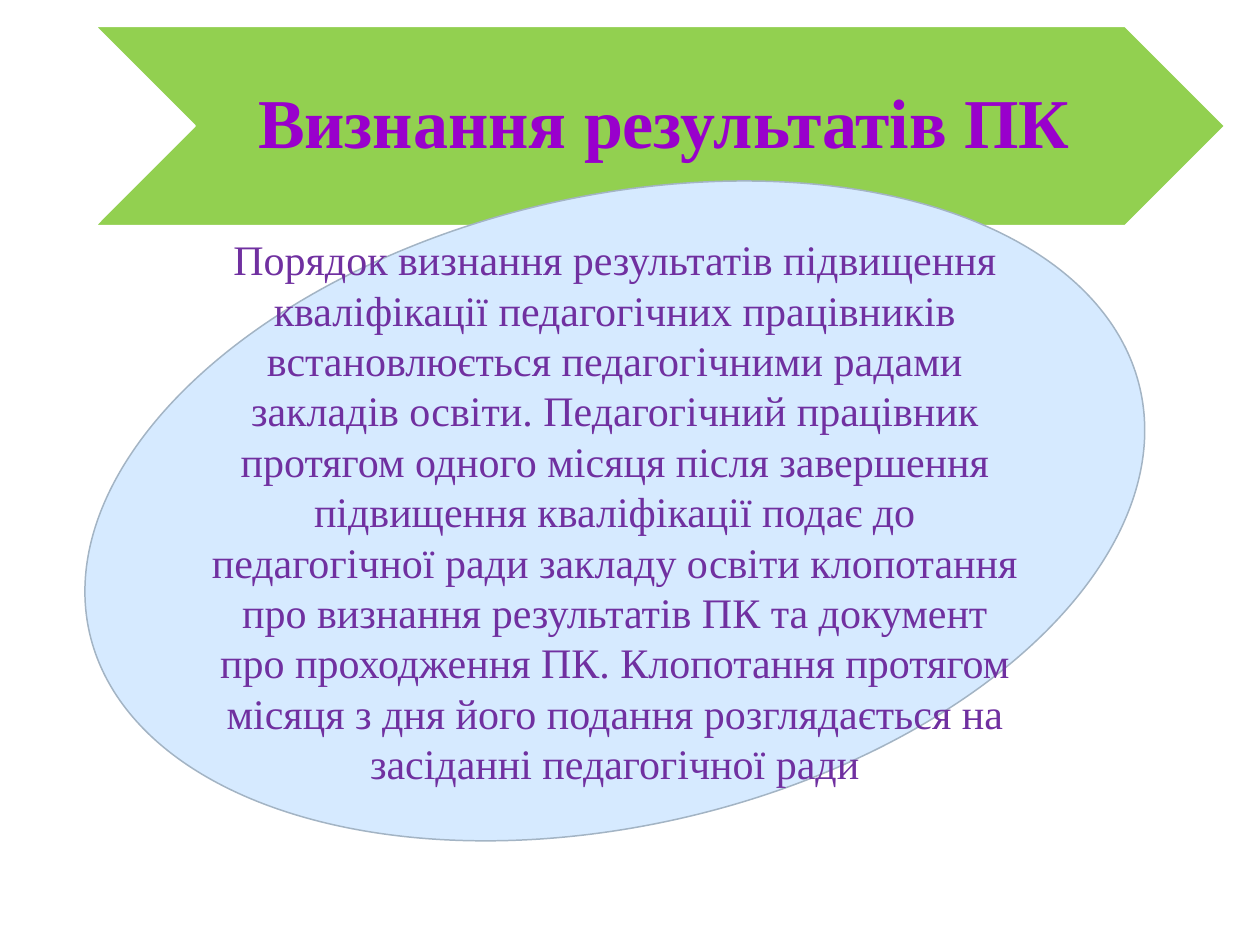
from dataclasses import dataclass

import pptx
import pptx.dml.color
import pptx.enum.shapes
import pptx.enum.text
import pptx.util
from pptx.util import Inches

SHAPE = pptx.enum.shapes.MSO_SHAPE


@dataclass(frozen=True)
class Theme:
    font: str = "Times New Roman"
    title_size: float = 40
    body_size: float = 24
    body_leading: float = 28.8
    line_width: float = 0.85
    chevron: str = "92D050"
    chevron_line: str = "FFFFFF"
    ellipse: str = "D6EAFF"
    ellipse_line: str = "A3B4C4"
    title: str = "9900CC"
    body: str = "7030A0"


THEME = Theme()
TITLE = "Визнання результатів ПК"
BODY = (
    "Порядок визнання результатів підвищення кваліфікації педагогічних "
    "працівників встановлюється педагогічними радами закладів освіти. "
    "Педагогічний працівник протягом одного місяця після завершення "
    "підвищення кваліфікації подає до педагогічної ради закладу освіти "
    "клопотання про визнання результатів ПК та документ про проходження ПК. "
    "Клопотання протягом місяця з дня його подання розглядається на "
    "засіданні педагогічної ради"
)


def rgb(value):
    return pptx.dml.color.RGBColor.from_string(value)


def add_shape(slide, kind, box, fill, line):
    sp = slide.shapes.add_shape(kind, *box)
    sp.shadow.inherit = False
    sp.fill.solid()
    sp.fill.fore_color.rgb = rgb(fill)
    sp.line.color.rgb = rgb(line)
    sp.line.width = pptx.util.Pt(THEME.line_width)
    return sp


def set_text(sp, text, *, size, color, bold=False, spacing=1.0, margins=(0, 0, 0, 0)):
    """Write one centred paragraph without a bullet."""
    tf = sp.text_frame
    tf.word_wrap = True
    tf.auto_size = pptx.enum.text.MSO_AUTO_SIZE.NONE
    tf.vertical_anchor = pptx.enum.text.MSO_ANCHOR.MIDDLE
    tf.margin_left, tf.margin_top, tf.margin_right, tf.margin_bottom = map(Inches, margins)
    p = tf.paragraphs[0]
    p.alignment = pptx.enum.text.PP_ALIGN.CENTER
    p.line_spacing = spacing
    p.space_before = pptx.util.Pt(0)
    pPr = p._p.get_or_add_pPr()
    pPr.set("marL", "0")
    pPr.set("indent", "0")
    pPr.append(pptx.oxml.parse_xml(
        '<a:buNone xmlns:a="http://schemas.openxmlformats.org/drawingml/2006/main"/>'))
    r = p.add_run()
    r.text = text
    r.font.name = THEME.font
    r.font.size = pptx.util.Pt(size)
    r.font.bold = bold
    r.font.color.rgb = rgb(color)


def place_on_top(slide, sp, box):
    """Move a placeholder into the box and in front of the shapes drawn so far."""
    sp.left, sp.top, sp.width, sp.height = box
    slide.shapes._spTree.append(sp._element)


def add_title_banner(slide, left, top, width, height):
    add_shape(slide, SHAPE.CHEVRON, (left, top, width, height),
              THEME.chevron, THEME.chevron_line)
    inset = height // 2
    sp = slide.shapes.title
    place_on_top(slide, sp, (left + inset, top, width - 2 * inset, height))
    set_text(sp, TITLE, size=THEME.title_size, color=THEME.title, bold=True,
             spacing=0.9, margins=(0.06, 0.03, 0, 0.03))


def add_body_ellipse(slide, left, top, width, height):
    sp = add_shape(slide, SHAPE.OVAL, (left, top, width, height),
                   THEME.ellipse, THEME.ellipse_line)
    sp.rotation = -13.2
    text_width = Inches(6.43)
    body = slide.placeholders[1]
    place_on_top(slide, body, (left + (width - text_width) // 2, top, text_width, height))
    set_text(body, BODY, size=THEME.body_size, color=THEME.body,
             spacing=pptx.util.Pt(THEME.body_leading))


def main():
    prs = pptx.Presentation()
    prs.slide_width, prs.slide_height = Inches(10), Inches(7.5)
    slide = prs.slides.add_slide(prs.slide_layouts[1])
    add_title_banner(slide, Inches(0.76), Inches(0.21), Inches(8.96), Inches(1.58))
    add_body_ellipse(slide, Inches(0.6), Inches(1.56), Inches(8.56), Inches(4.99))
    prs.save("out.pptx")


if __name__ == "__main__":
    main()
